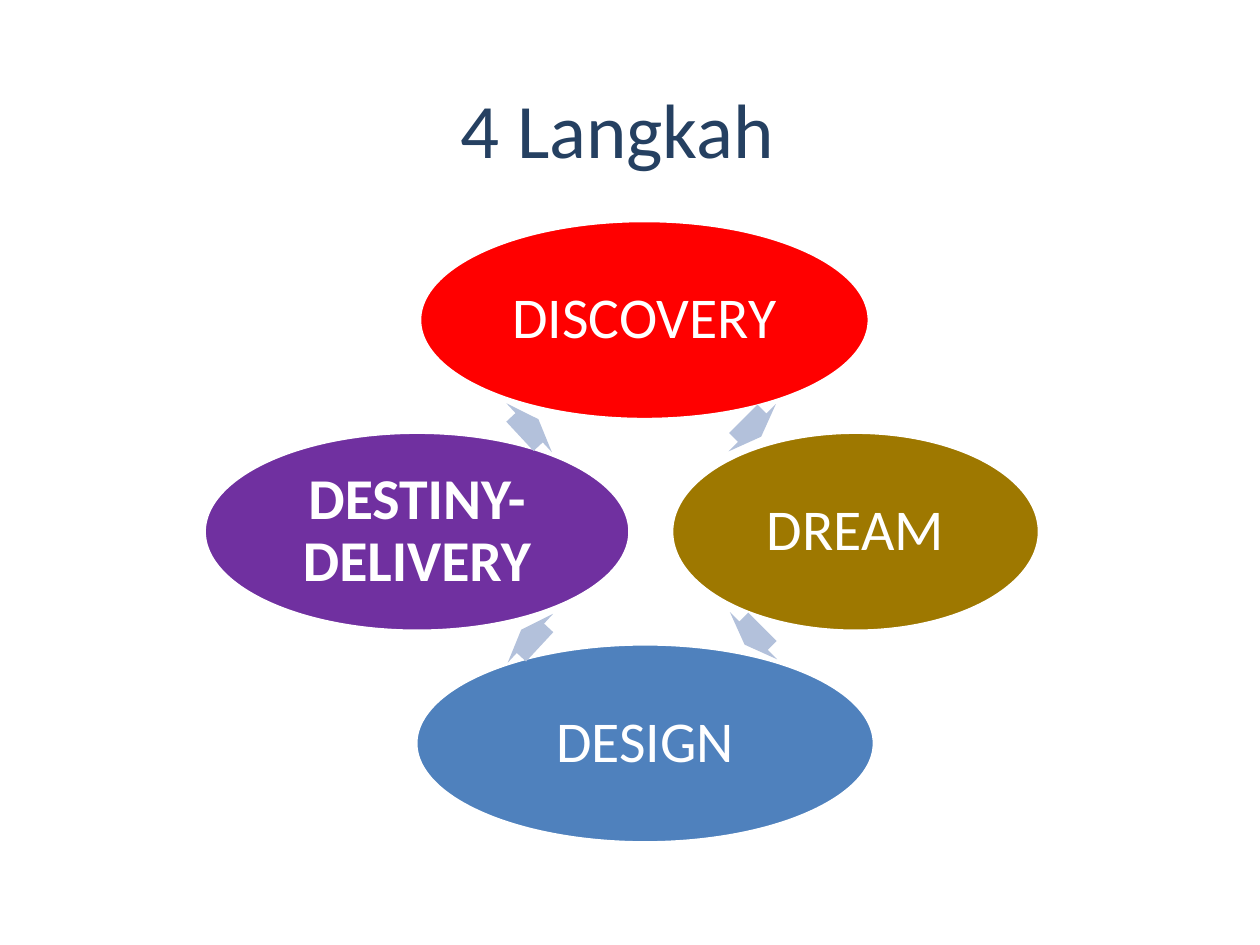
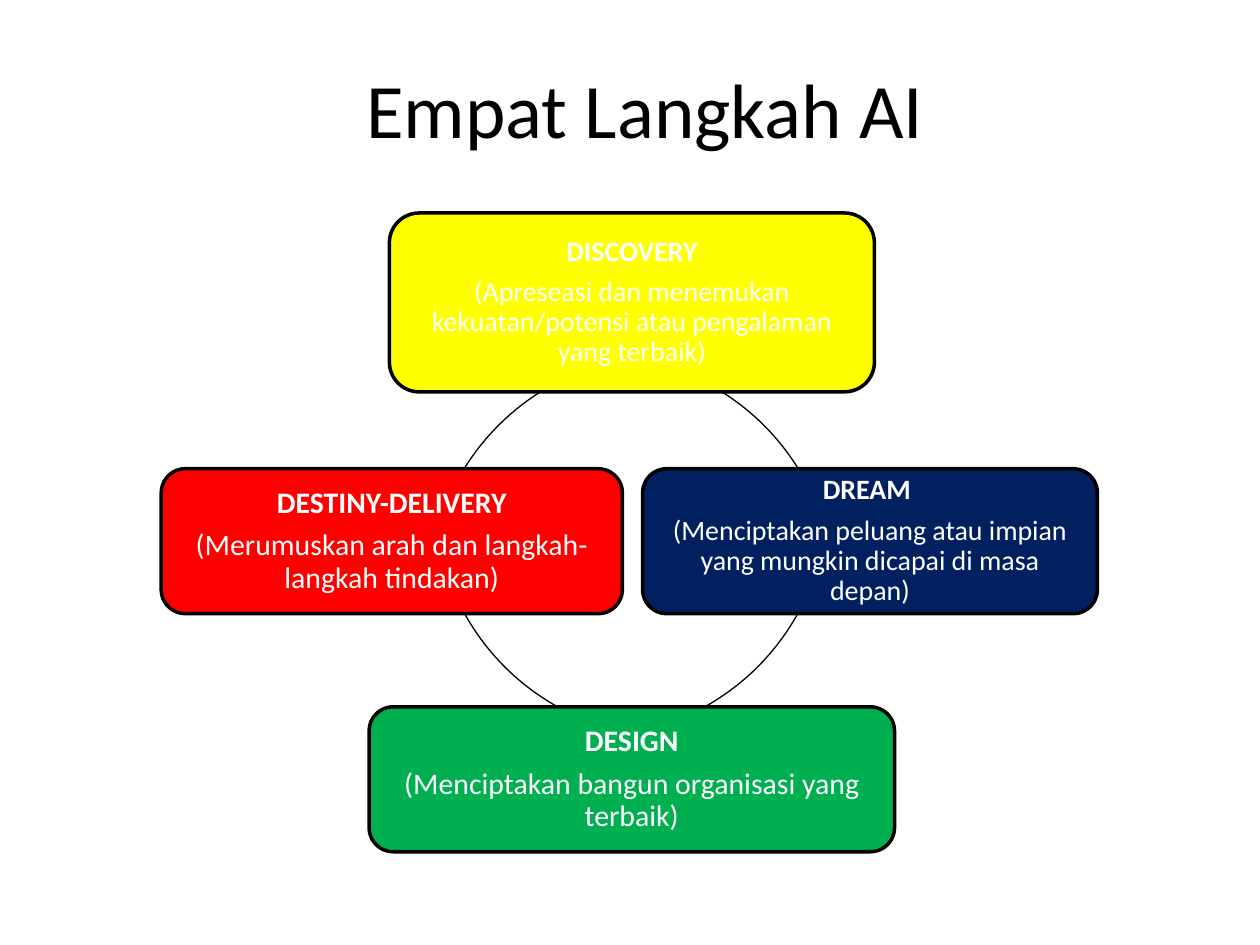
from pptx import Presentation
from pptx import util as u
from pptx.dml.color import RGBColor
from pptx.enum import shapes, text

PX = 9144  # 100 px to the inch
FONT = "Calibri"
COLOURS = {
    "white": "FFFFFF", "black": "000000", "navy": "254061",
    "red": "FF0000", "ochre": "9E7800", "blue": "4F81BD", "purple": "7030A0",
    "arrow": "B3C1DB", "yellow": "FFFF00", "midnight": "002060", "green": "00B050",
}
SHAPE = shapes.MSO_SHAPE


def colour(name):
    return RGBColor.from_string(COLOURS[name])


def write(shape, lines, size, ink="white", bold=(False,), inset=(10, 5), spacing=1.0):
    """Fill a shape with centred paragraphs; bold holds one flag per line."""
    frame = shape.text_frame
    frame.word_wrap = True
    frame.vertical_anchor = text.MSO_ANCHOR.MIDDLE
    frame.margin_left = frame.margin_right = inset[0] * PX
    frame.margin_top = frame.margin_bottom = inset[1] * PX
    for index, line in enumerate(lines):
        para = frame.paragraphs[0] if index == 0 else frame.add_paragraph()
        para.alignment = text.PP_ALIGN.CENTER
        para.line_spacing = spacing
        if index < len(lines) - 1:
            para.space_after = u.Pt(round(size * 0.35, 1))
        span = para.add_run()
        span.text = line
        span.font.name = FONT
        span.font.size = u.Pt(size)
        span.font.bold = bold[index]
        span.font.color.rgb = colour(ink)


def add_part(page, kind, box, fill=None, line=None, weight=2, adjust=(), turn=0):
    """Add a preset shape without shadow; box is left, top, width, height."""
    part = page.shapes.add_shape(kind, *(length * PX for length in box))
    part.shadow.inherit = False
    part.rotation = turn
    for index, value in enumerate(adjust):
        part.adjustments[index] = value
    if fill:
        part.fill.solid()
        part.fill.fore_color.rgb = colour(fill)
    else:
        part.fill.background()
    if line:
        part.line.color.rgb = colour(line)
        part.line.width = u.Pt(weight)
    else:
        part.line.fill.background()
    return part


def add_title(page, left, top, title, ink):
    box = page.shapes.add_textbox(left * PX, top * PX, 900 * PX, 125 * PX)
    write(box, [title], 44, ink=ink)


def add_ellipse_cycle(page, left, top):
    """Four ellipses on three rows, each followed by an arrow to the next."""
    height, row = 158, 168
    # name, left, row, width, fill, bold, arrow left, arrow top, arrow turn
    steps = [
        ("DISCOVERY", 171, 0, 357, "red", False, 425, 138, 45),
        ("DREAM", 371, 1, 292, "ochre", False, 426, 303, 135),
        ("DESIGN", 168, 2, 364, "blue", False, 249, 305, 222.9),
        ("DESTINY-DELIVERY", 0, 1, 338, "purple", True, 248, 138, 317.1),
    ]
    for name, x, level, width, fill, bold, arrow_x, arrow_y, turn in steps:
        ellipse = add_part(page, SHAPE.OVAL, (left + x, top + level * row, width, height),
                           fill=fill, line="white")
        write(ellipse, [name], 33, bold=[bold], inset=(5, 5), spacing=0.9)
        add_part(page, SHAPE.RIGHT_ARROW, (left + arrow_x, top + arrow_y, 20, 53),
                 fill="arrow", adjust=(0.6, 0.5), turn=turn)


def add_card_cycle(page, left, top):
    """Four rounded cards, each followed by an arc to the next."""
    ring = 380
    degree = 0.6  # adjustment units in one degree
    # name, detail, card box, fill, text size, arc left, arc top, arc angles
    steps = [
        ("DISCOVERY", "(Apreseasi dan menemukan kekuatan/potensi atau pengalaman yang terbaik)",
         (181, 0, 385, 142), "yellow", 16, 154, 113, (302, 328)),
        ("DREAM ", "(Menciptakan peluang atau impian yang mungkin dicapai di masa depan)",
         (382, 203, 361, 115), "midnight", 16, 149, 36, (29.3, 60.7)),
        ("DESIGN", "(Menciptakan bangun organisasi yang terbaik)",
         (165, 392, 417, 115), "green", 17, 217, 36, (119.3, 150.7)),
        ("DESTINY-DELIVERY", "(Merumuskan arah dan langkah-langkah tindakan)",
         (0, 203, 366, 115), "red", 17, 212, 113, (212, 238)),
    ]
    for name, detail, (x, y, width, height), fill, size, arc_x, arc_y, angles in steps:
        card = add_part(page, SHAPE.ROUNDED_RECTANGLE, (left + x, top + y, width, height),
                        fill=fill, line="black")
        write(card, [name, detail], size, bold=(True, False), inset=(7, 7), spacing=0.9)
        add_part(page, SHAPE.ARC, (left + arc_x, top + arc_y, ring, ring),
                 line="black", weight=0.75, adjust=[angle * degree for angle in angles])


def main():
    deck = Presentation()
    deck.slide_width, deck.slide_height = 1000 * PX, 750 * PX
    blank = deck.slide_layouts[6]

    # Overview of the four steps
    page = deck.slides.add_slide(blank)
    add_title(page, 47, 39, "4 Langkah ", "navy")
    add_ellipse_cycle(page, 162, 175)

    # The four steps explained
    page = deck.slides.add_slide(blank)
    add_title(page, 62, 23, "Empat Langkah AI", "black")
    add_card_cycle(page, 128, 169)

    deck.save("out.pptx")


if __name__ == "__main__":
    main()
